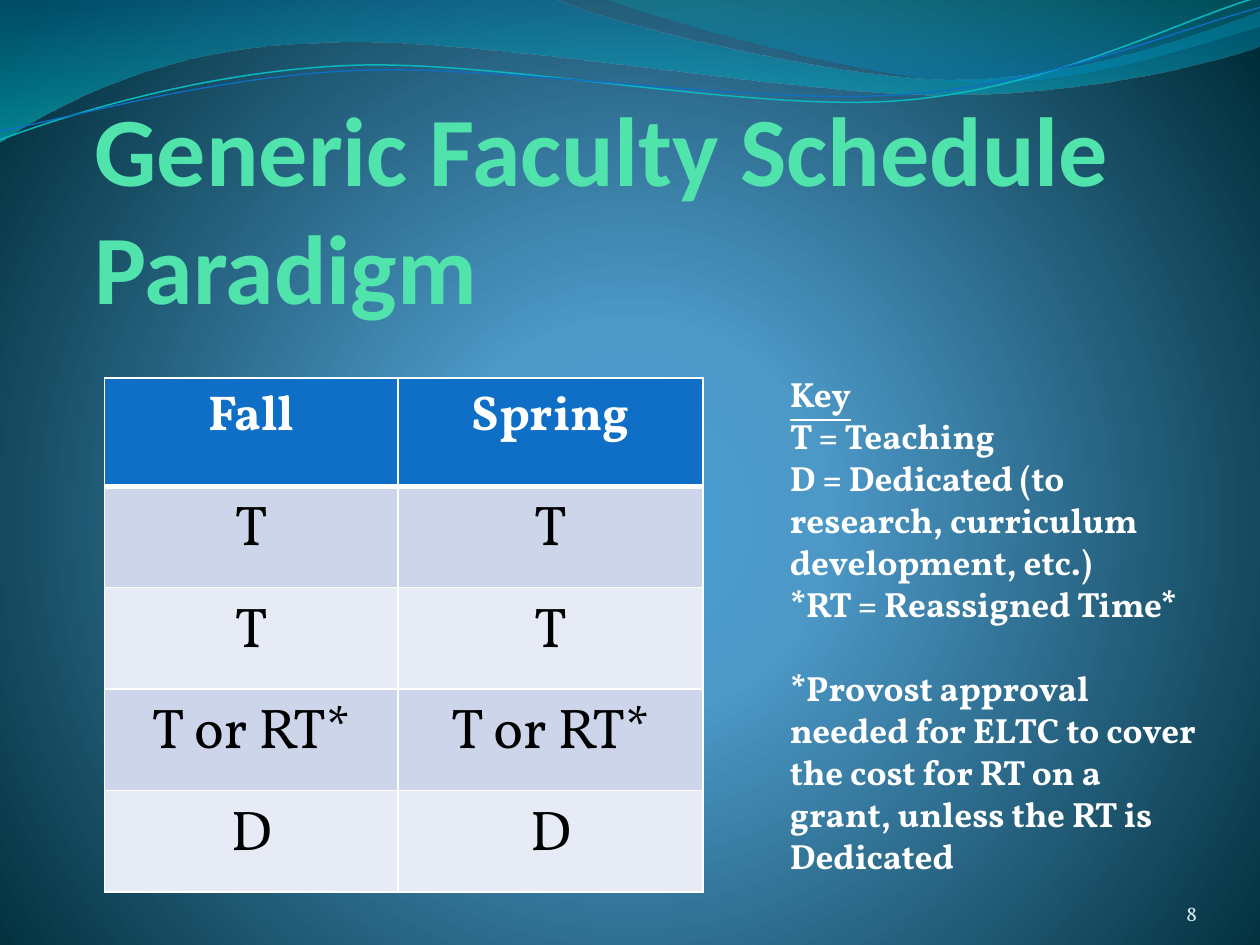
import pptx
import pptx.util
import pptx.dml.color
import pptx.enum.text
import pptx.oxml
import pptx.oxml.ns

Inches, Pt = pptx.util.Inches, pptx.util.Pt
ALIGN, ANCHOR = pptx.enum.text.PP_ALIGN, pptx.enum.text.MSO_ANCHOR
NS = pptx.oxml.ns.nsdecls("a")
qn = pptx.oxml.ns.qn

COLORS = {
    "title": "50E3AC", "white": "FFFFFF", "black": "000000", "number": "D1EAEE",
    "header": "0F6FC6", "band_dark": "CCD5EA", "band_light": "E7EBF5",
    "teal_line": "0AB8BF", "blue_line": "0F6FC6",
}
BACKGROUND = [(0, "4AA0D6", 100), (25, "4C98C7", 100), (100, "002C38", 100)]
CIRCLE = ('<a:path path="circle"><a:fillToRect l="10000" t="110000" '
          'r="10000" b="100000"/></a:path>')
DOWNWARD = '<a:lin ang="5400000" scaled="0"/>'

TITLE = "Generic Faculty Schedule Paradigm"
SCHEDULE = [("Fall", "Spring"), ("T", "T"), ("T", "T"),
            ("T or RT*", "T or RT*"), ("D", "D")]
COL_WIDTHS = [2.33, 2.42]
TABLE_HEIGHT, HEADER_HEIGHT = 4.08, 0.86
KEY = ["Key", "T = Teaching",
       "D = Dedicated (to research, curriculum development, etc.)",
       "*RT = Reassigned Time*",
       "*Provost approval needed for ELTC to cover the cost for RT on a grant, "
       "unless the RT is Dedicated"]

# Each outline: start point, then segments of one point (line) or three (curve)
WAVES = [
    ((0, 0), [
        [(4.4, -0.01)],
        [(4.76, 0.17), (6.64, 0.63), (7.58, 0.63)],
        [(8.53, 0.63), (9.58, 0.26), (10, 0.09)],
        [(10.01, 0.36)],
        [(9.83, 0.44), (8.7, 0.76), (7.46, 0.75)],
        [(6.22, 0.75), (3.82, 0.28), (2.57, 0.34)],
        [(1.29, 0.36), (0.46, 0.83), (-0.01, 1.13)]],
     [(0, "0074A1", 45), (100, "00C6CF", 55)]),
    ((4.79, -0.01), [
        [(5.09, 0.11), (6.82, 0.62), (7.69, 0.65)],
        [(8.56, 0.69), (9.61, 0.32), (10, 0.21)],
        [(10, 0)]],
     [(0, "00A1A9", 30), (80, "008BBF", 45)]),
]
STRANDS = [
    ((0, 1.11), [
        [(0.48, 0.93), (1.58, 0.57), (2.77, 0.52)],
        [(3.95, 0.47), (5.93, 0.89), (7.13, 0.8)],
        [(8.33, 0.71), (9.38, 0.15), (9.98, -0.02)]], "teal_line", 0.85),
    ((0, 1.04), [
        [(0.47, 0.96), (1.64, 0.61), (2.83, 0.56)],
        [(4.03, 0.51), (5.97, 0.84), (7.17, 0.75)],
        [(8.36, 0.67), (9.41, 0.21), (10, 0.06)]], "blue_line", 0.75),
]


def rgb(name):
    return pptx.dml.color.RGBColor.from_string(COLORS[name])


def set_gradient(parent, stops, shade):
    """Replace the solid fill under parent with a gradient."""
    gs = "".join(
        f'<a:gs pos="{pos * 1000}"><a:srgbClr val="{color}">'
        f'<a:alpha val="{alpha * 1000}"/></a:srgbClr></a:gs>'
        for pos, color, alpha in stops)
    grad = pptx.oxml.parse_xml(
        f'<a:gradFill {NS} rotWithShape="1"><a:gsLst>{gs}</a:gsLst>{shade}</a:gradFill>')
    parent.replace(parent.find(qn("a:solidFill")), grad)


def add_curve(s, start, segments, close):
    """Build an outline, then turn each run of three points into a curve."""
    points = [(Inches(x), Inches(y)) for seg in segments for x, y in seg]
    builder = s.shapes.build_freeform(Inches(start[0]), Inches(start[1]))
    builder.add_line_segments(points, close=close)
    sp = builder.convert_to_shape()
    sp.shadow.inherit = False
    lines = iter(list(sp._element.iter(qn("a:lnTo"))))
    for seg in segments:
        group = [next(lines) for _ in seg]
        if len(group) == 3:
            curve = pptx.oxml.parse_xml(f"<a:cubicBezTo {NS}/>")
            group[0].addprevious(curve)
            for line in group:
                curve.append(line[0])
                line.getparent().remove(line)
    return sp


def write(p, text, size=20, font="Vollkorn", color="white", bold=False,
          underline=False, align=ALIGN.LEFT):
    p.alignment = align
    r = p.add_run()
    r.text = text
    r.font.size, r.font.name = Pt(size), font
    r.font.bold, r.font.underline = bold, underline
    r.font.color.rgb = rgb(color)


def add_box(s, left, top, width, height, anchor=ANCHOR.TOP, inset=True):
    tf = s.shapes.add_textbox(*map(Inches, (left, top, width, height))).text_frame
    tf.word_wrap = True
    tf.vertical_anchor = anchor
    if not inset:
        tf.margin_left = tf.margin_right = tf.margin_top = tf.margin_bottom = 0
    return tf


def set_borders(cell, **widths):
    tcPr = cell._tc.get_or_add_tcPr()
    for i, side in enumerate("LRTB"):
        tcPr.insert(i, pptx.oxml.parse_xml(
            f'<a:ln{side} {NS} w="{Pt(widths.get(side, 1))}"><a:solidFill>'
            f'<a:srgbClr val="{COLORS["white"]}"/></a:solidFill></a:ln{side}>'))


prs = pptx.Presentation()
prs.slide_width, prs.slide_height = Inches(10), Inches(7.5)
s = prs.slides.add_slide(prs.slide_layouts[6])

# Background
s.background.fill.solid()
set_gradient(s._element.cSld.bg.bgPr, BACKGROUND, CIRCLE)

# Waves and strands across the top
for start, segments, stops in WAVES:
    sp = add_curve(s, start, segments, True)
    sp.line.fill.background()
    sp.fill.solid()
    set_gradient(sp._element.spPr, stops, DOWNWARD)
for start, segments, color, width in STRANDS:
    sp = add_curve(s, start, segments, False)
    sp.fill.background()
    sp.line.color.rgb = rgb(color)
    sp.line.width = Pt(width)

# Title
tf = add_box(s, 0.75, 1.08, 8.5, 1.49, ANCHOR.BOTTOM, inset=False)
write(tf.paragraphs[0], TITLE, size=56, font="Calibri", color="title", bold=True)

# Schedule table
table = s.shapes.add_table(
    len(SCHEDULE), len(COL_WIDTHS), Inches(0.83), Inches(3),
    Inches(sum(COL_WIDTHS)), Inches(TABLE_HEIGHT)).table
for col, width in zip(table.columns, COL_WIDTHS):
    col.width = Inches(width)
body_height = (TABLE_HEIGHT - HEADER_HEIGHT) / (len(SCHEDULE) - 1)
for i, values in enumerate(SCHEDULE):
    head = i == 0
    table.rows[i].height = Inches(HEADER_HEIGHT if head else body_height)
    fill = "header" if head else "band_dark" if i % 2 else "band_light"
    for j, text in enumerate(values):
        cell = table.cell(i, j)
        cell.fill.solid()
        cell.fill.fore_color.rgb = rgb(fill)
        set_borders(cell, T=3 if i == 1 else 1, B=3 if head else 1)
        write(cell.text_frame.paragraphs[0], text, size=28 if head else 32,
              color="white" if head else "black", bold=head, align=ALIGN.CENTER)

# Key, with the note set one line apart
tf = add_box(s, 6.17, 2.91, 3.5, 4.14)
for i, text in enumerate(KEY):
    p = tf.paragraphs[0] if i == 0 else tf.add_paragraph()
    write(p, text, bold=True, underline=i == 0)
p.space_before = Pt(24)

# Slide number
tf = add_box(s, 8.67, 6.95, 0.83, 0.4, ANCHOR.BOTTOM, inset=False)
write(tf.paragraphs[0], "8", size=12, color="number", align=ALIGN.RIGHT)

prs.save("out.pptx")
